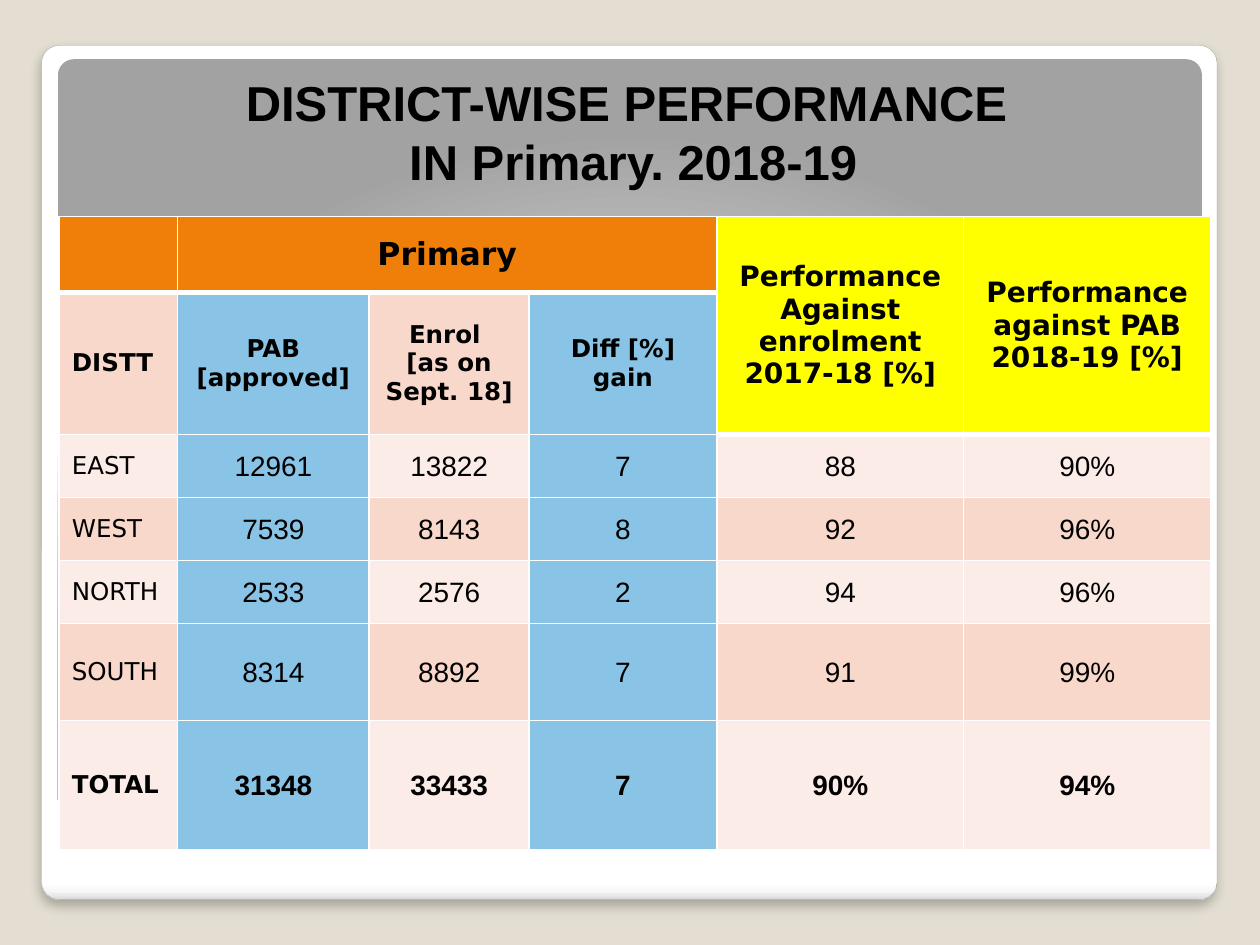
import copy

from lxml import etree
from pptx import Presentation
from pptx.dml.color import RGBColor
from pptx.enum import shapes, text
from pptx.oxml import ns, parse_xml
from pptx.util import Inches, Pt

COLORS = {
    "background": "E3DED1", "outline": "A4A4A4", "ink": "000000", "border": "FFFFFF",
    "orange": "F07F09", "yellow": "FFFF00", "blue": "89C3E5",
    "rose": "F9D8CC", "blush": "FCECE7",
}
COLUMN_WIDTHS = [0.94, 1.52, 1.27, 1.49, 1.96, 1.96]
ROW_HEIGHTS = [0.6, 0.87, 0.5, 0.5, 0.5, 0.77, 1.03]
BLUE_COLUMNS = (1, 3)
HEADINGS = [
    ["", "Primary", "", "", "Performance\nAgainst enrolment\n2017-18 [%]",
     "Performance against PAB\n2018-19 [%]"],
    ["DISTT", "PAB [approved]", "Enrol \n[as on Sept. 18]", "Diff [%]\ngain", "", ""],
]
DISTRICTS = [
    ["EAST", "12961", "13822", "7", "88", "90%"],
    ["WEST", "7539", "8143", "8", "92", "96%"],
    ["NORTH", "2533", "2576", "2", "94", "96%"],
    ["SOUTH", "8314", "8892", "7", "91", "99%"],
    ["TOTAL", "31348", "33433", "7", "90%", "94%"],
]
CARD_SHADE = '<a:lin ang="5400000" scaled="0"/>'
BANNER_SHADE = ('<a:path path="circle"><a:fillToRect l="50000" t="175000" '
                'r="50000" b="-75000"/></a:path>')
CARD_SHADOW = ('<a:effectLst {ns}><a:outerShdw blurRad="76200" dist="50800" dir="5400000" '
               'algn="tl" rotWithShape="0"><a:srgbClr val="{ink}"><a:alpha val="25000"/>'
               '</a:srgbClr></a:outerShdw></a:effectLst>')


def rgb(name):
    return RGBColor.from_string(COLORS[name])


def add_panel(slide, left, top, width, height, stops, shade):
    panel = slide.shapes.add_shape(
        shapes.MSO_SHAPE.ROUNDED_RECTANGLE,
        Inches(left), Inches(top), Inches(width), Inches(height))
    panel.adjustments[0] = 0.021
    panel.shadow.inherit = False
    panel.line.fill.background()
    stop_xml = "".join(
        f'<a:gs pos="{position * 1000}"><a:srgbClr val="{color}"/></a:gs>'
        for position, color in stops)
    gradient = parse_xml(
        f'<a:gradFill {ns.nsdecls("a")} rotWithShape="1"><a:gsLst>{stop_xml}</a:gsLst>'
        f'{shade}</a:gradFill>')
    panel._element.spPr.find(ns.qn("a:prstGeom")).addnext(gradient)
    return panel


def add_card(slide):
    card = add_panel(
        slide, 0.33, 0.36, 9.33, 6.78,
        [(0, "FFFFFF"), (98, "FFFFFF"), (99, "F7F7F7"), (100, "DADADA")], CARD_SHADE)
    card.line.color.rgb = rgb("outline")
    card.line.width = Pt(0.16)
    properties = card._element.spPr
    shadow = parse_xml(CARD_SHADOW.format(ns=ns.nsdecls("a"), ink=COLORS["ink"]))
    properties.replace(properties.find(ns.qn("a:effectLst")), shadow)


def format_runs(paragraph, size, font, bold):
    for run in paragraph.runs:
        run.font.size = Pt(size)
        run.font.name = font
        run.font.bold = bold
        run.font.color.rgb = rgb("ink")


def place_title(slide):
    title = slide.shapes.title
    slide.shapes._spTree.append(title._element)
    title.left, title.top = Inches(0.39), Inches(0.23)
    title.width, title.height = Inches(9.27), Inches(1.33)
    frame = title.text_frame
    frame.text = "DISTRICT-WISE PERFORMANCE \vIN Primary. 2018-19"
    frame.auto_size = text.MSO_AUTO_SIZE.NONE
    frame.vertical_anchor = text.MSO_ANCHOR.BOTTOM
    heading = frame.paragraphs[0]
    heading.alignment = text.PP_ALIGN.CENTER
    format_runs(heading, 28, "Arial", True)
    line_break = heading._p.find(ns.qn("a:br"))
    line_break.append(copy.deepcopy(heading.runs[0]._r.rPr))


def set_borders(cell, bottom_width):
    properties = cell._tc.get_or_add_tcPr()
    for side, width in (("L", 1), ("R", 1), ("T", 1), ("B", bottom_width)):
        border = etree.SubElement(properties, ns.qn(f"a:ln{side}"), w=str(Pt(width)))
        fill = etree.SubElement(border, ns.qn("a:solidFill"))
        etree.SubElement(fill, ns.qn("a:srgbClr"), val=COLORS["border"])


def cell_color(row, column):
    if row < 2 and column > 3:
        return "yellow"
    if row == 0:
        return "orange"
    if column in BLUE_COLUMNS:
        return "blue"
    return "rose" if row % 2 else "blush"


def cell_font(row, column):
    if row > 1 and column > 0:
        return 16, "Arial"
    if row == 0:
        return (16 if column > 3 else 18), "DejaVu Sans"
    return 14, "DejaVu Sans"


def fill_cell(cell, words, row, column):
    set_borders(cell, 3 if row == 0 or (row == 1 and column > 3) else 1)
    cell.fill.solid()
    cell.fill.fore_color.rgb = rgb(cell_color(row, column))
    cell.vertical_anchor = text.MSO_ANCHOR.MIDDLE
    if row > 1 and column > 0:
        cell.margin_left = cell.margin_right = cell.margin_top = Inches(0.01)
        cell.margin_bottom = 0
    if not words:
        return
    cell.text_frame.text = words
    size, font = cell_font(row, column)
    for paragraph in cell.text_frame.paragraphs:
        if column > 0:
            paragraph.alignment = text.PP_ALIGN.CENTER
        format_runs(paragraph, size, font, row < 2 or words == "TOTAL" or row == 6)


def add_performance_table(slide):
    rows = HEADINGS + DISTRICTS
    table = slide.shapes.add_table(
        len(rows), len(COLUMN_WIDTHS), Inches(0.47), Inches(1.72),
        Inches(9.14), Inches(4.77)).table
    for column, width in zip(table.columns, COLUMN_WIDTHS):
        column.width = Inches(width)
    for row, height in zip(table.rows, ROW_HEIGHTS):
        row.height = Inches(height)
    for row, entries in enumerate(rows):
        for column, words in enumerate(entries):
            fill_cell(table.cell(row, column), words, row, column)
    table.cell(0, 1).merge(table.cell(0, 3))
    for column in (4, 5):
        table.cell(0, column).merge(table.cell(1, column))


def main():
    deck = Presentation()
    deck.slide_width, deck.slide_height = Inches(10), Inches(7.5)
    slide = deck.slides.add_slide(deck.slide_layouts[5])
    slide.background.fill.solid()
    slide.background.fill.fore_color.rgb = rgb("background")
    add_card(slide)
    add_panel(slide, 0.46, 0.47, 9.08, 6,
              [(0, "FFFFFF"), (55, "E1E1E1"), (100, "A2A2A2")], BANNER_SHADE)
    place_title(slide)
    add_performance_table(slide)
    deck.save("out.pptx")


if __name__ == "__main__":
    main()
